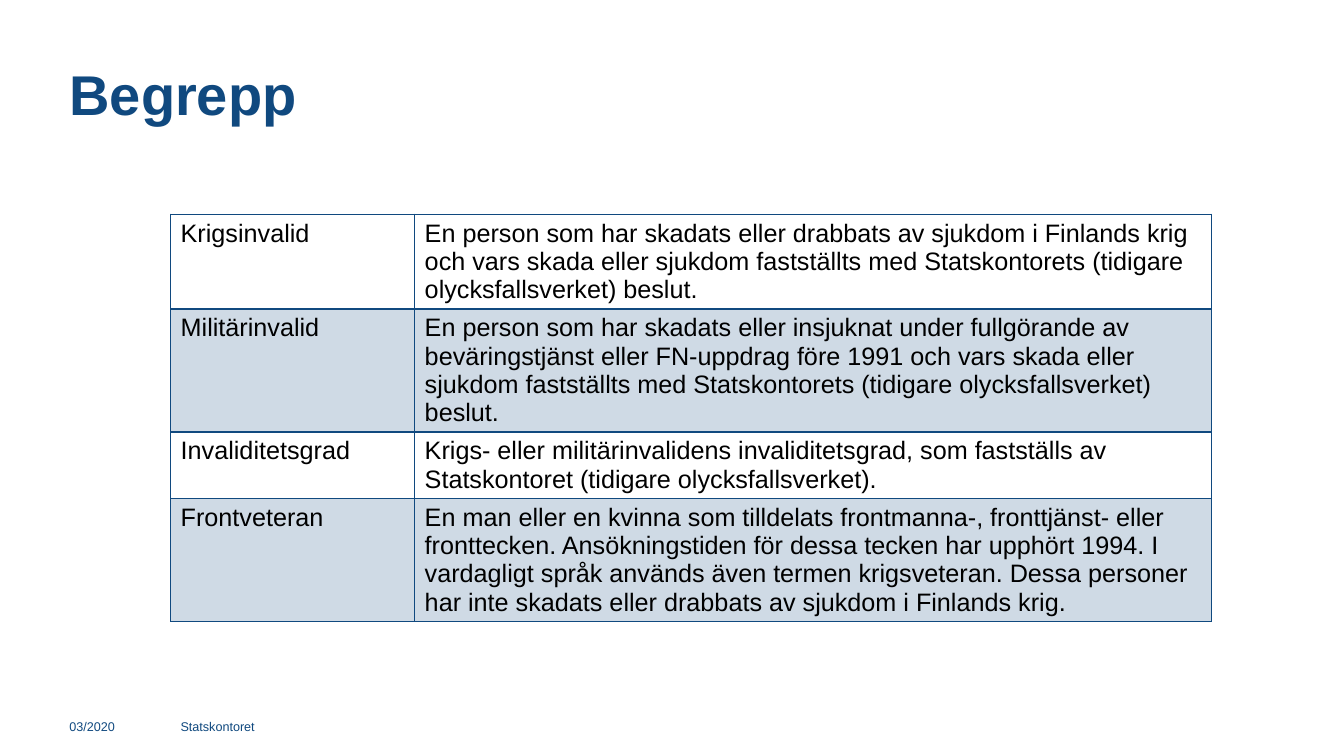
from lxml import etree
from pptx import Presentation
from pptx.dml.color import RGBColor
from pptx.enum.text import MSO_ANCHOR, MSO_AUTO_SIZE, PP_ALIGN
from pptx.oxml.ns import qn
from pptx.util import Cm, Pt

TOP, MIDDLE = MSO_ANCHOR.TOP, MSO_ANCHOR.MIDDLE
LEFT = PP_ALIGN.LEFT
NO_AUTOFIT = MSO_AUTO_SIZE.NONE
TITLE_ONLY = 5

FONT = "Arial"
BLUE, BLACK = "10497F", "000000"
BAND_OPACITY = 20  # percent

MARGIN, TABLE_LEFT = 1.5, 4.3  # cm
TERM_WIDTH, MEANING_WIDTH = 6.15, 20.09
ROW_HEIGHT = 1.04  # rows grow with their text

CONCEPTS = [
    ("Krigsinvalid",
     "En person som har skadats eller drabbats av sjukdom i Finlands krig och vars "
     "skada eller sjukdom fastställts med Statskontorets (tidigare "
     "olycksfallsverket) beslut."),
    ("Militärinvalid",
     "En person som har skadats eller insjuknat under fullgörande av beväringstjänst "
     "eller FN-uppdrag före 1991 och vars skada eller sjukdom fastställts med "
     "Statskontorets (tidigare olycksfallsverket) beslut."),
    ("Invaliditetsgrad",
     "Krigs- eller militärinvalidens invaliditetsgrad, som fastställs av "
     "Statskontoret (tidigare olycksfallsverket)."),
    ("Frontveteran",
     "En man eller en kvinna som tilldelats frontmanna-, fronttjänst- eller "
     "fronttecken. Ansökningstiden för dessa tecken har upphört 1994. I vardagligt "
     "språk används även termen krigsveteran. Dessa personer har inte skadats eller "
     "drabbats av sjukdom i Finlands krig."),
]


def color(hex_value):
    return RGBColor.from_string(hex_value)


def write(frame, text, size, hex_value, bold=False):
    frame.text = text
    paragraph = frame.paragraphs[0]
    paragraph.alignment = LEFT
    font = paragraph.font
    font.name, font.size, font.bold = FONT, Pt(size), bold
    font.color.rgb = color(hex_value)
    return paragraph


def set_borders(cell, widths):
    """Draw the cell's borders; widths are points by side."""
    properties = cell._tc.get_or_add_tcPr()
    for side in "LRTB":
        line = etree.SubElement(properties, qn(f"a:ln{side}"), w=str(Pt(widths[side])))
        fill = etree.SubElement(line, qn("a:solidFill"))
        etree.SubElement(fill, qn("a:srgbClr"), val=BLUE)


def fill_band(cell):
    cell.fill.solid()
    cell.fill.fore_color.rgb = color(BLUE)
    tint = cell._tc.tcPr.find(qn("a:solidFill")).find(qn("a:srgbClr"))
    etree.SubElement(tint, qn("a:alpha"), val=str(BAND_OPACITY * 1000))


def add_title(slide, left, top, width, height):
    title = slide.shapes.title
    title.left, title.top, title.width, title.height = map(Cm, (left, top, width, height))
    frame = title.text_frame
    frame.vertical_anchor, frame.auto_size = TOP, NO_AUTOFIT
    write(frame, "Begrepp", 40, BLUE, bold=True).line_spacing = 0.95


def add_concepts(slide, left, top, column_widths):
    table = slide.shapes.add_table(
        len(CONCEPTS), len(column_widths), Cm(left), Cm(top),
        Cm(sum(column_widths)), Cm(ROW_HEIGHT * len(CONCEPTS))).table
    table.first_row = table.horz_banding = False
    for column, width in zip(table.columns, column_widths):
        column.width = Cm(width)
    for row, concept in enumerate(CONCEPTS):
        # The line under the first row is heavier
        widths = {"L": 1, "R": 1, "T": 2 if row == 1 else 1, "B": 2 if row == 0 else 1}
        for column, text in enumerate(concept):
            cell = table.cell(row, column)
            write(cell.text_frame, text, 18, BLACK)
            set_borders(cell, widths)
            if row % 2:
                fill_band(cell)
            else:
                cell.fill.background()


def add_footer(slide, top, height):
    for text, left, width in (("03/2020", MARGIN, 2.7), ("Statskontoret", TABLE_LEFT, 19.9)):
        frame = slide.shapes.add_textbox(*map(Cm, (left, top, width, height))).text_frame
        frame.word_wrap = True
        frame.vertical_anchor = MIDDLE
        write(frame, text, 9, BLUE)


def main():
    presentation = Presentation()
    presentation.slide_width, presentation.slide_height = Cm(33.87), Cm(19.05)
    slide = presentation.slides.add_slide(presentation.slide_layouts[TITLE_ONLY])
    add_title(slide, MARGIN, 1.5, 30.8, 3.7)
    add_concepts(slide, TABLE_LEFT, 5.4, (TERM_WIDTH, MEANING_WIDTH))
    add_footer(slide, 17.8, 1)
    presentation.save("out.pptx")


if __name__ == "__main__":
    main()
